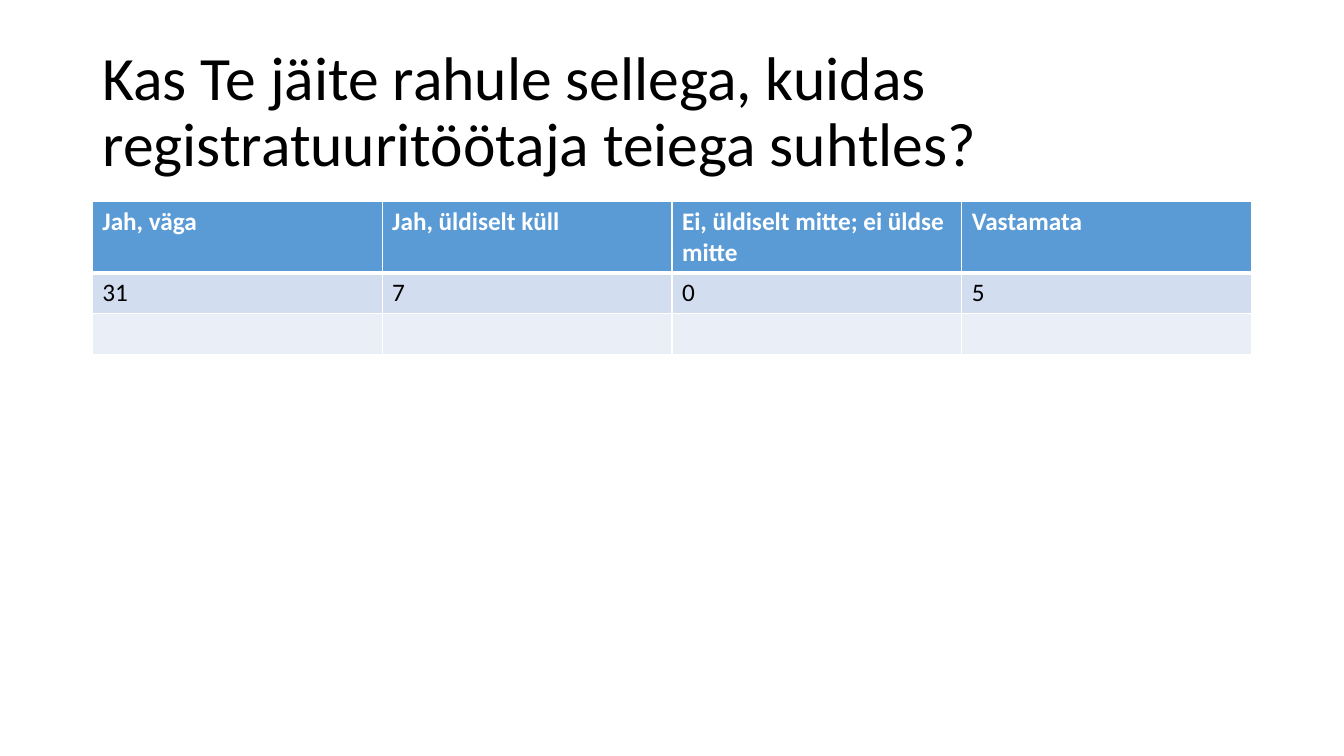
import pptx
import pptx.dml.color
import pptx.enum.text
import pptx.oxml
import pptx.oxml.ns
import pptx.util
from dataclasses import dataclass

Pt = pptx.util.Pt


@dataclass(frozen=True)
class Theme:
    font: str = "Calibri"
    title_size: float = 44
    cell_size: float = 18
    text: str = "000000"
    light: str = "FFFFFF"
    header: str = "5B9BD5"
    bands: tuple = ("D2DEEF", "EAEFF7")
    rule: float = 1
    header_rule: float = 3


THEME = Theme()
TITLE = "Kas Te jäite rahule sellega, kuidas registratuuritöötaja teiega suhtles?"
ANSWERS = [
    ["Jah, väga", "Jah, üldiselt küll", "Ei, üldiselt mitte; ei üldse mitte", "Vastamata"],
    ["31", "7", "0", "5"],
    ["", "", "", ""],
]


def format_font(font, color, **values):
    font.color.rgb = pptx.dml.color.RGBColor.from_string(color)
    for name, value in {"name": THEME.font, **values}.items():
        setattr(font, name, value)


def set_borders(cell, widths):
    """Draw the cell's edges in the light colour; widths maps L, R, T, B to points."""
    tcPr = cell._tc.get_or_add_tcPr()
    for i, (side, width) in enumerate(widths.items()):
        tcPr.insert(i, pptx.oxml.parse_xml(
            f'<a:ln{side} {pptx.oxml.ns.nsdecls("a")} w="{Pt(width)}"><a:solidFill>'
            f'<a:srgbClr val="{THEME.light}"/></a:solidFill></a:ln{side}>'))


def add_title(s, box, text):
    sp = s.shapes.title
    for name, value in zip(("left", "top", "width", "height"), box):
        setattr(sp, name, Pt(value))
    tf = sp.text_frame
    tf.text = text
    tf.word_wrap = True
    tf.auto_size = pptx.enum.text.MSO_AUTO_SIZE.NONE
    tf.vertical_anchor = pptx.enum.text.MSO_ANCHOR.MIDDLE
    p = tf.paragraphs[0]
    p.alignment = pptx.enum.text.PP_ALIGN.LEFT
    p.line_spacing = 0.9
    format_font(p.runs[0].font, THEME.text, size=Pt(THEME.title_size))


def add_answer_table(s, box, rows):
    left, top, width, height = box
    columns = len(rows[0])
    table = s.shapes.add_table(
        len(rows), columns, Pt(left), Pt(top), Pt(width), Pt(height)).table
    for column in table.columns:
        column.width = Pt(width / columns)
    for i, texts in enumerate(rows):
        table.rows[i].height = Pt(height / len(rows))
        is_header = i == 0
        fill = THEME.header if is_header else THEME.bands[(i - 1) % 2]
        color = THEME.light if is_header else THEME.text
        widths = {
            "L": THEME.rule,
            "R": THEME.rule,
            "T": THEME.header_rule if i == 1 else THEME.rule,
            "B": THEME.header_rule if is_header else THEME.rule,
        }
        for j, text in enumerate(texts):
            cell = table.cell(i, j)
            cell.fill.solid()
            cell.fill.fore_color.rgb = pptx.dml.color.RGBColor.from_string(fill)
            set_borders(cell, widths)
            if text:
                r = cell.text_frame.paragraphs[0].add_run()
                r.text = text
                format_font(r.font, color, size=Pt(THEME.cell_size), bold=is_header)


def main():
    prs = pptx.Presentation()
    prs.slide_width, prs.slide_height = Pt(960), Pt(540)
    s = prs.slides.add_slide(prs.slide_layouts[5])
    add_title(s, (66, 28.75, 828, 104.4), TITLE)
    add_answer_table(s, (66, 143.75, 828, 87.6), ANSWERS)
    prs.save("out.pptx")


if __name__ == "__main__":
    main()
